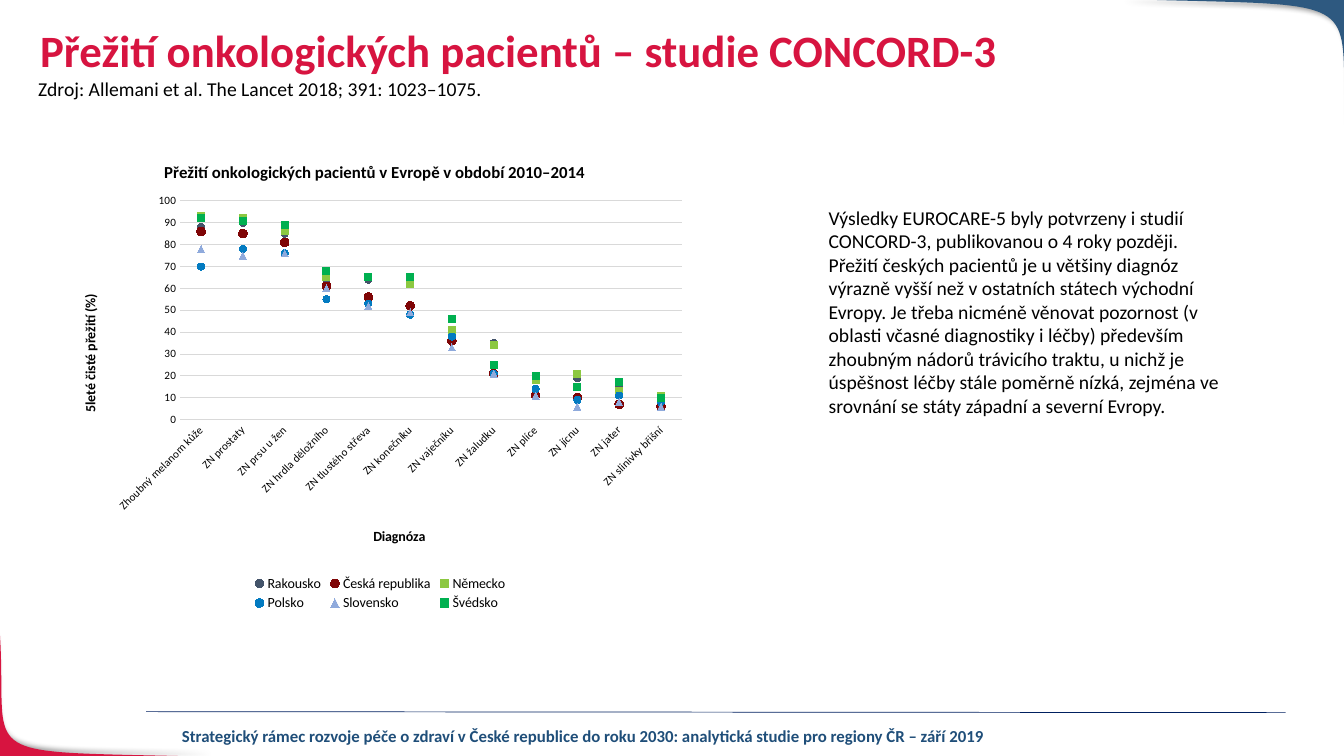
from dataclasses import dataclass

from lxml.etree import SubElement
from pptx import Presentation
from pptx.chart.data import CategoryChartData
from pptx.dml.color import RGBColor
from pptx.enum.chart import XL_CHART_TYPE as CT, XL_LEGEND_POSITION as LP
from pptx.enum.chart import XL_MARKER_STYLE as MS, XL_TICK_MARK as TM
from pptx.enum.shapes import MSO_CONNECTOR
from pptx.enum.text import MSO_ANCHOR, PP_ALIGN
from pptx.oxml.ns import qn
from pptx.util import Inches, Pt


@dataclass(frozen=True)
class Theme:
    font: str = "Calibri"
    red: str = "D71440"
    blue: str = "2E5980"
    navy: str = "002060"
    footer: str = "1F4E79"
    text: str = "000000"
    grid: str = "D9D9D9"
    title_size: int = 32
    body_size: int = 14
    small_size: int = 12
    label_size: int = 10
    tick_size: int = 8


T = Theme()

CATEGORIES = [
    "Zhoubný melanom kůže", "ZN prostaty", "ZN prsu u žen", "ZN hrdla děložního",
    "ZN tlustého střeva", "ZN konečníku", "ZN vaječníku", "ZN žaludku",
    "ZN plíce", "ZN jícnu", "ZN jater", "ZN slinivky břišní",
]
COUNTRIES = [
    ("Rakousko", MS.CIRCLE, 5, "44546A", (88, 90, 85, 64, 64, 64, 41, 35, 20, 19, 15, 10)),
    ("Česká republika", MS.CIRCLE, 6, "7F0506", (86, 85, 81, 61, 56, 52, 36, 21, 11, 10, 7, 6)),
    ("Německo", MS.SQUARE, 5, "8CC841", (93, 92, 86, 65, 65, 62, 41, 34, 18, 21, 13, 11)),
    ("Polsko", MS.CIRCLE, 5, "037BC1", (70, 78, 76, 55, 53, 48, 38, 21, 14, 9, 11, 8)),
    ("Slovensko", MS.TRIANGLE, 5, "8FAADC", (78, 75, 76, 60, 52, 49, 33, 21, 11, 6, 8, 6)),
    ("Švédsko", MS.SQUARE, 5, "00B050", (92, 91, 89, 68, 65, 65, 46, 25, 20, 15, 17, 10)),
]
COMMENTARY = (
    "Výsledky EUROCARE-5 byly potvrzeny i studií CONCORD-3, publikovanou o 4 roky později. "
    "Přežití českých pacientů je u většiny diagnóz výrazně vyšší než v ostatních státech "
    "východní Evropy. Je třeba nicméně věnovat pozornost (v oblasti včasné diagnostiky i léčby) "
    "především zhoubným nádorů trávicího traktu, u nichž je úspěšnost léčby stále poměrně nízká, "
    "zejména ve srovnání se státy západní a severní Evropy."
)


def rgb(color):
    return RGBColor.from_string(color)


def style_font(font, size, color=T.text, bold=False):
    font.name, font.size, font.bold = T.font, Pt(size), bold
    font.color.rgb = rgb(color)


def add_text(slide, box, text, size, color=T.text, bold=False,
             align=PP_ALIGN.LEFT, anchor=MSO_ANCHOR.TOP, spacing=None):
    tf = slide.shapes.add_textbox(*map(Inches, box)).text_frame
    tf.word_wrap = True
    tf.vertical_anchor = anchor
    p = tf.paragraphs[0]
    p.alignment, p.line_spacing = align, spacing
    r = p.add_run()
    r.text = text
    style_font(r.font, size, color, bold)


def curve(start, c1, c2, end, steps=40):
    for i in range(steps + 1):
        t = i / steps
        weights = ((1 - t) ** 3, 3 * t * (1 - t) ** 2, 3 * t * t * (1 - t), t ** 3)
        points = (start, c1, c2, end)
        yield tuple(sum(w * pt[k] for w, pt in zip(weights, points)) for k in (0, 1))


def add_shadow(sp, angle):
    effects = SubElement(sp._element.spPr, qn("a:effectLst"))
    shadow = SubElement(effects, qn("a:outerShdw"), blurRad=str(Pt(4)),
                        dist=str(Pt(3)), dir=str(angle * 60000), rotWithShape="0")
    color = SubElement(shadow, qn("a:srgbClr"), val=T.text)
    SubElement(color, qn("a:alpha"), val="40000")


def add_corner(slide, bezier, corner, color, angle):
    points = [(Inches(x), Inches(y)) for x, y in [*curve(*bezier), corner]]
    builder = slide.shapes.build_freeform(*points[0])
    builder.add_line_segments(points[1:], close=True)
    sp = builder.convert_to_shape()
    sp.fill.solid()
    sp.fill.fore_color.rgb = rgb(color)
    sp.line.fill.background()
    add_shadow(sp, angle)


def add_rule(slide, start, end):
    line = slide.shapes.add_connector(MSO_CONNECTOR.STRAIGHT, *map(Inches, start + end))
    line.line.color.rgb = rgb(T.navy)
    line.line.width = Pt(0.5)
    SubElement(line._element.spPr, qn("a:effectLst"))


def place(element, index, inner=False, **fractions):
    for old in element.findall(qn("c:layout")):
        element.remove(old)
    layout = SubElement(element, qn("c:layout"))
    element.insert(index, layout)
    manual = SubElement(layout, qn("c:manualLayout"))
    if inner:
        SubElement(manual, qn("c:layoutTarget"), val="inner")
    for key in ("x", "y"):
        SubElement(manual, qn(f"c:{key}Mode"), val="edge")
    for key, value in fractions.items():
        SubElement(manual, qn(f"c:{key}"), val=str(value))


def set_title(title, text, size):
    r = title.text_frame.paragraphs[0].add_run()
    r.text = text
    style_font(r.font, size, bold=True)


def style_axis(axis, title):
    axis.major_tick_mark = axis.minor_tick_mark = TM.NONE
    style_font(axis.tick_labels.font, T.tick_size)
    set_title(axis.axis_title, title, T.label_size)


def style_series(series, marker, size, color):
    series.smooth = False
    series.format.line.fill.background()
    series.marker.style, series.marker.size = marker, size
    fmt = series.marker.format
    fmt.fill.solid()
    fmt.fill.fore_color.rgb = rgb(color)
    fmt.line.color.rgb = rgb(color)


def add_survival_chart(slide, box):
    data = CategoryChartData()
    data.categories = CATEGORIES
    for name, *_, values in COUNTRIES:
        data.add_series(name, values)
    chart = slide.shapes.add_chart(CT.LINE_MARKERS, *map(Inches, box), data).chart
    style_font(chart.font, T.label_size)
    chart.plots[0].vary_by_categories = False
    for series, (_, marker, size, color, _) in zip(chart.plots[0].series, COUNTRIES):
        style_series(series, marker, size, color)

    chart.has_title = True
    set_title(chart.chart_title, "Přežití onkologických pacientů v Evropě v období 2010–2014",
              T.small_size)
    cat, val = chart.category_axis, chart.value_axis
    style_axis(cat, "Diagnóza")
    style_axis(val, "5leté čisté přežití (%)")
    val.minimum_scale, val.maximum_scale, val.major_unit = 0, 100, 10
    val.format.line.fill.background()
    for line in (cat.format.line, val.major_gridlines.format.line):
        line.color.rgb = rgb(T.grid)
        line.width = Pt(0.75)

    chart.has_legend = True
    chart.legend.position = LP.BOTTOM
    chart.legend.include_in_layout = False
    style_font(chart.legend.font, T.label_size)

    root = chart.element
    root.xpath(".//c:catAx/c:txPr/a:bodyPr")[0].set("rot", "-2700000")
    root.xpath(".//c:valAx/c:title//a:bodyPr")[0].set("rot", "-5400000")
    places = [(0.16, 0.04), (0.49, 0.81), (0.03, 0.32)]
    for title, (x, y) in zip(root.xpath(".//c:title"), places):
        place(title, 1, x=x, y=y)
    place(root.xpath(".//c:plotArea")[0], 0, inner=True, x=0.19, y=0.13, w=0.79, h=0.46)
    place(root.xpath(".//c:legend")[0], 1, x=0.3, y=0.91, w=0.41, h=0.09)


def main():
    prs = Presentation()
    prs.slide_width, prs.slide_height = Inches(13.33), Inches(7.5)
    slide = prs.slides.add_slide(prs.slide_layouts[6])

    add_corner(slide, ((2.13, 7.51), (-0.34, 7.44), (0.08, 7.59), (0, 6.3)),
               (-0.01, 7.51), T.red, 225)
    add_corner(slide, ((11.11, -0.01), (13.7, 0.07), (13.26, -0.1), (13.35, 1.42)),
               (13.35, -0.01), T.blue, 45)
    add_rule(slide, (1.45, 7.06), (12.75, 7.07))
    add_text(slide, (1.68, 7.15, 8.21, 0.3),
             "Strategický rámec rozvoje péče o zdraví v České republice do roku 2030: "
             "analytická studie pro regiony ČR – září 2019",
             T.small_size, T.footer, True, PP_ALIGN.CENTER)

    add_survival_chart(slide, (0.59, 1.38, 6.3, 4.72))
    add_text(slide, (8.12, 1.99, 4.18, 2.22), COMMENTARY, T.body_size)
    add_text(slide, (0.28, 0.71, 10.49, 0.34),
             "Zdroj: Allemani et al. The Lancet 2018; 391: 1023–1075.", T.body_size)
    add_text(slide, (0.3, 0.18, 11.5, 0.69), "Přežití onkologických pacientů – studie CONCORD-3",
             T.title_size, T.red, True, anchor=MSO_ANCHOR.MIDDLE, spacing=0.9)
    prs.save("out.pptx")


if __name__ == "__main__":
    main()
